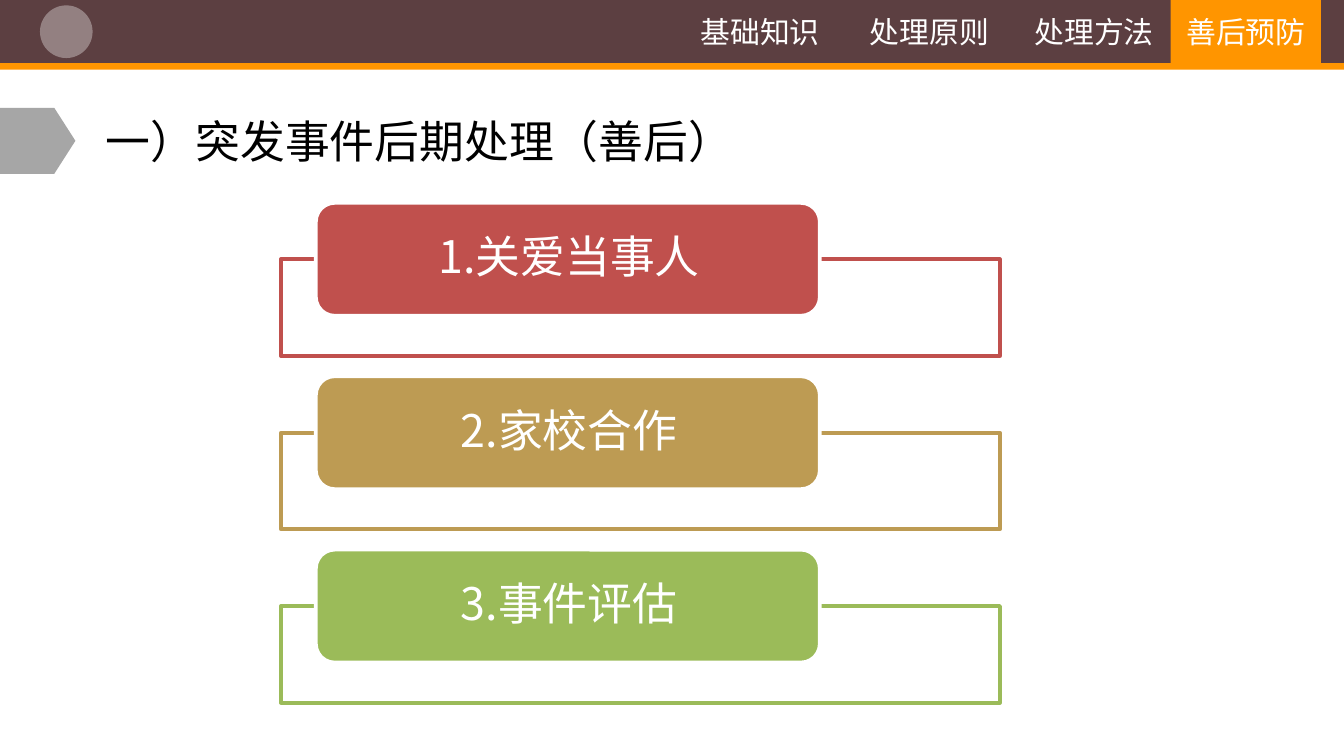
"""Build the slide on follow-up care after an emergency."""
import dataclasses
import typing

import lxml.etree
import pptx
import pptx.dml.color
import pptx.enum.shapes
import pptx.enum.text
import pptx.oxml.ns
import pptx.util

Pt = pptx.util.Pt
SHAPE = pptx.enum.shapes.MSO_SHAPE
ALIGN = pptx.enum.text.PP_ALIGN
FONT = "Noto Sans CJK SC"
WHITE, BLACK, ORANGE, BROWN, GREY = "FFFFFF", "000000", "FF9500", "5C3F41", "A6A6A6"
FRAME_FORMAT = {
    "word_wrap": True,
    "vertical_anchor": pptx.enum.text.MSO_ANCHOR.MIDDLE,
}
STEP_MARGINS = {
    "margin_left": Pt(10),
    "margin_right": Pt(10),
    "margin_top": Pt(0),
    "margin_bottom": Pt(0),
}


class Box(typing.NamedTuple):
    """A rectangle in points."""
    left: float
    top: float
    width: float
    height: float


@dataclasses.dataclass
class Step:
    """One numbered stage of the follow-up."""
    wording: str
    color: str


@dataclasses.dataclass
class Tab:
    """One entry of the navigation bar."""
    wording: str
    left: float
    width: float
    active: bool = False


STEPS = [
    Step("1.关爱当事人", "C0504D"),
    Step("2.家校合作", "BD9B53"),
    Step("3.事件评估", "9BBB59"),
]
TABS = [
    Tab("基础知识", 362.2, 90),
    Tab("处理原则", 452.2, 91.4),
    Tab("处理方法", 543.6, 85),
    Tab("善后预防", 627.1, 80.6, active=True),
]
STEP_TOP, STEP_PITCH = 108.7, 92.9
BAR_HEIGHT = 33.8


def paint(color_format: typing.Any, color: str, alpha: int = 100) -> None:
    """Apply a hex colour, with an opacity in percent."""
    color_format.rgb = pptx.dml.color.RGBColor.from_string(color)
    if alpha < 100:
        tint = color_format._xFill.find(pptx.oxml.ns.qn("a:srgbClr"))
        lxml.etree.SubElement(tint, pptx.oxml.ns.qn("a:alpha"), val=str(alpha * 1000))


def draw_shape(slide: typing.Any, kind: typing.Any, box: Box, color: str,
               alpha: int = 100, outline: str = "") -> typing.Any:
    """Draw a filled preset shape, outlined when a colour is given."""
    shape = slide.shapes.add_shape(kind, *map(Pt, box))
    shape.shadow.inherit = False
    shape.fill.solid()
    paint(shape.fill.fore_color, color, alpha)
    if outline:
        shape.line.width = Pt(2)
        shape.line.fill.solid()
        paint(shape.line.color, outline)
    else:
        shape.line.fill.background()
    return shape


def write(holder: typing.Any, wording: str, size: float, color: str,
          align: typing.Any = ALIGN.CENTER, spacing: float = 1.0,
          margins: typing.Optional[dict] = None) -> None:
    """Put one formatted line of text into a shape or text box."""
    frame = holder.text_frame
    for name, value in {**FRAME_FORMAT, **(margins or {})}.items():
        setattr(frame, name, value)
    paragraph = frame.paragraphs[0]
    for name, value in {"alignment": align, "line_spacing": spacing}.items():
        setattr(paragraph, name, value)
    run = paragraph.add_run()
    run.text = wording
    for name, value in {"name": FONT, "size": Pt(size)}.items():
        setattr(run.font, name, value)
    run.font.fill.solid()
    paint(run.font.fill.fore_color, color)
    lxml.etree.SubElement(run._r.get_or_add_rPr(), pptx.oxml.ns.qn("a:ea"), typeface=FONT)


def draw_step(slide: typing.Any, step: Step, top: float) -> None:
    """Draw a stage: an open frame behind a coloured label."""
    draw_shape(slide, SHAPE.RECTANGLE, Box(150.5, top + 30.2, 385.2, 51.8),
               WHITE, 90, step.color)
    draw_shape(slide, SHAPE.ROUNDED_RECTANGLE, Box(169.2, top, 270, 60.5),
               step.color, outline=WHITE)
    label = slide.shapes.add_textbox(*map(Pt, Box(172.8, top + 2.9, 264.2, 54.7)))
    write(label, step.wording, 24, WHITE, spacing=0.9, margins=STEP_MARGINS)


def draw_tab(slide: typing.Any, tab: Tab) -> None:
    """Draw a navigation entry, highlighted when active."""
    box = Box(tab.left, 0, tab.width, BAR_HEIGHT)
    if tab.active:
        entry = draw_shape(slide, SHAPE.RECTANGLE, box, ORANGE)
    else:
        entry = slide.shapes.add_textbox(*map(Pt, box))
    write(entry, tab.wording, 16, WHITE)


def main() -> None:
    """Assemble and save the slide."""
    deck = pptx.Presentation()
    deck.slide_width, deck.slide_height = Pt(720), Pt(405)
    slide = deck.slides.add_slide(deck.slide_layouts[6])

    heading = draw_shape(slide, SHAPE.RECTANGLE, Box(49.7, 52.6, 453.6, 45.4), WHITE)
    write(heading, "一）突发事件后期处理（善后）", 24, BLACK, ALIGN.LEFT)
    for index, step in enumerate(STEPS):
        draw_step(slide, step, STEP_TOP + index * STEP_PITCH)

    draw_shape(slide, SHAPE.RECTANGLE, Box(0, 0, 720, BAR_HEIGHT), BROWN)
    draw_shape(slide, SHAPE.RECTANGLE, Box(0, BAR_HEIGHT, 720, 3.6), ORANGE)
    for tab in TABS:
        draw_tab(slide, tab)
    draw_shape(slide, SHAPE.OVAL, Box(21.4, 2.9, 28.2, 28.2), WHITE, 34)
    marker = draw_shape(slide, SHAPE.PENTAGON, Box(0, 57.8, 40.4, 35.3), GREY)
    marker.adjustments[0] = 0.32

    deck.save("out.pptx")


if __name__ == "__main__":
    main()
